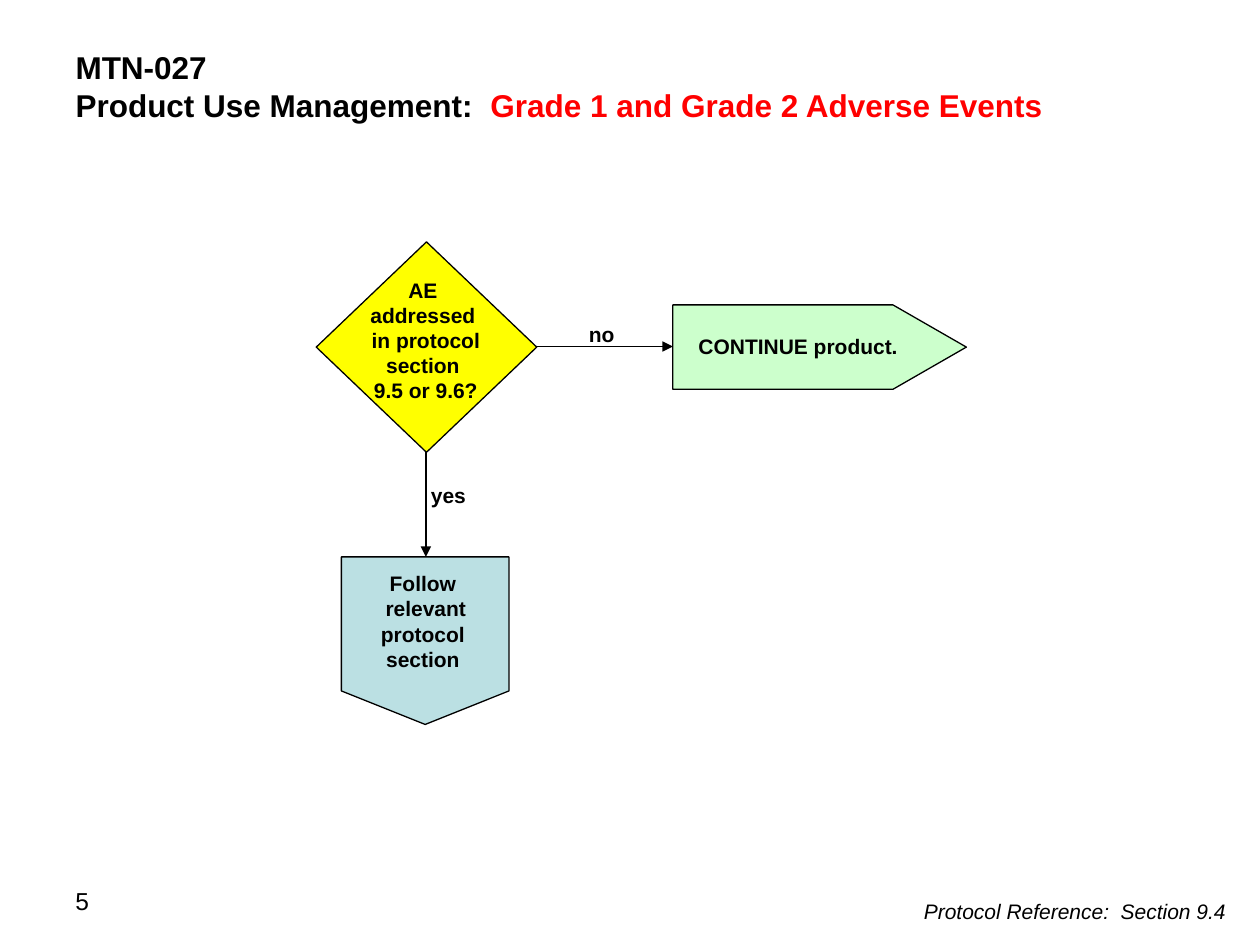
from lxml import etree
from pptx import Presentation, util as u
from pptx.dml.color import RGBColor
from pptx.enum import shapes, text
from pptx.oxml import ns

BLACK = "000000"
CENTER = text.PP_ALIGN.CENTER


def color(value):
    return RGBColor.from_string(value)


class FlowPage:
    """Hold the style and the current slide of a flow chart."""

    font = "Arial"
    line_width = u.Pt(0.75)

    def __init__(self, deck):
        self.page = deck.slides.add_slide(deck.slide_layouts[5])

    def place(self, at):
        return [u.Inches(value) for value in at]

    def fill_text(self, frame, lines, size, align=text.PP_ALIGN.LEFT, bold=False, italic=False):
        frame.word_wrap = True
        frame.auto_size = text.MSO_AUTO_SIZE.NONE
        frame.vertical_anchor = text.MSO_ANCHOR.TOP
        for index, line in enumerate(lines):
            para = frame.add_paragraph() if index else frame.paragraphs[0]
            para.alignment = align
            for words, shade in line:
                span = para.add_run()
                span.text = words
                span.font.name = self.font
                span.font.size = u.Pt(size)
                span.font.bold = bold
                span.font.italic = italic
                span.font.color.rgb = color(shade)

    def title(self, at, lines):
        box = self.page.shapes.title
        box.left, box.top, box.width, box.height = self.place(at)
        self.fill_text(box.text_frame, lines, 18, bold=True)

    def label(self, at, lines, size=12, left_inset=0.1, **style):
        box = self.page.shapes.add_textbox(*self.place(at))
        box.text_frame.margin_left = u.Inches(left_inset)
        self.fill_text(box.text_frame, [[(line, BLACK)] for line in lines], size, **style)

    def node(self, kind, at, fill):
        box = self.page.shapes.add_shape(kind, *self.place(at))
        box.shadow.inherit = False
        box.fill.solid()
        box.fill.fore_color.rgb = color(fill)
        box.line.color.rgb = color(BLACK)
        box.line.width = self.line_width
        return box

    def arrow(self, start, end):
        link = self.page.shapes.add_connector(
            shapes.MSO_CONNECTOR.STRAIGHT, *self.place(start + end))
        link.line.color.rgb = color(BLACK)
        link.line.width = self.line_width
        properties = link._element.spPr
        outline = properties.find(ns.qn("a:ln"))
        etree.SubElement(outline, ns.qn("a:tailEnd"), type="triangle")
        etree.SubElement(properties, ns.qn("a:effectLst"))


def main():
    deck = Presentation()
    deck.slide_width, deck.slide_height = u.Inches(10), u.Inches(7.5)
    flow = FlowPage(deck)
    kinds = shapes.MSO_SHAPE

    flow.title((0.5, 0.33, 9, 0.71), [
        [("MTN-027", BLACK)],
        [("Product Use Management:  ", BLACK),
         ("Grade 1 and Grade 2 Adverse Events", "FF0000")],
    ])

    flow.node(kinds.DIAMOND, (2.51, 1.92, 1.75, 1.67), "FFFF00")
    proceed = flow.node(kinds.PENTAGON, (5.34, 2.42, 2.33, 0.67), "CCFFCC")
    proceed.adjustments[0] = 0.87
    flow.node(kinds.FLOWCHART_OFFPAGE_CONNECTOR, (2.71, 4.42, 1.33, 1.33), "BBE0E3")
    flow.arrow((4.26, 2.75), (5.34, 2.75))
    flow.arrow((3.38, 3.58), (3.38, 4.42))

    flow.label((2.63, 2.15, 1.5, 1.11),
               ["AE ", "addressed ", "in protocol section ", "9.5 or 9.6?"],
               align=CENTER, bold=True)
    flow.label((4.29, 2.5, 0.97, 0.3), ["no"], align=CENTER, bold=True)
    flow.label((5.25, 2.6, 2.17, 0.3), ["CONTINUE product."], align=CENTER, bold=True)
    flow.label((3.42, 3.78, 2.83, 0.3), ["yes"], left_inset=0, bold=True)
    flow.label((2.63, 4.48, 1.5, 0.91), ["Follow ", "relevant protocol ", "section "],
               align=CENTER, bold=True)
    flow.label((0.5, 6.98, 2.33, 0.52), ["5"], size=14)
    flow.label((6.08, 7.08, 3.75, 0.3), ["Protocol Reference:  Section 9.4"],
               align=text.PP_ALIGN.RIGHT, italic=True)

    deck.save("out.pptx")


if __name__ == "__main__":
    main()
